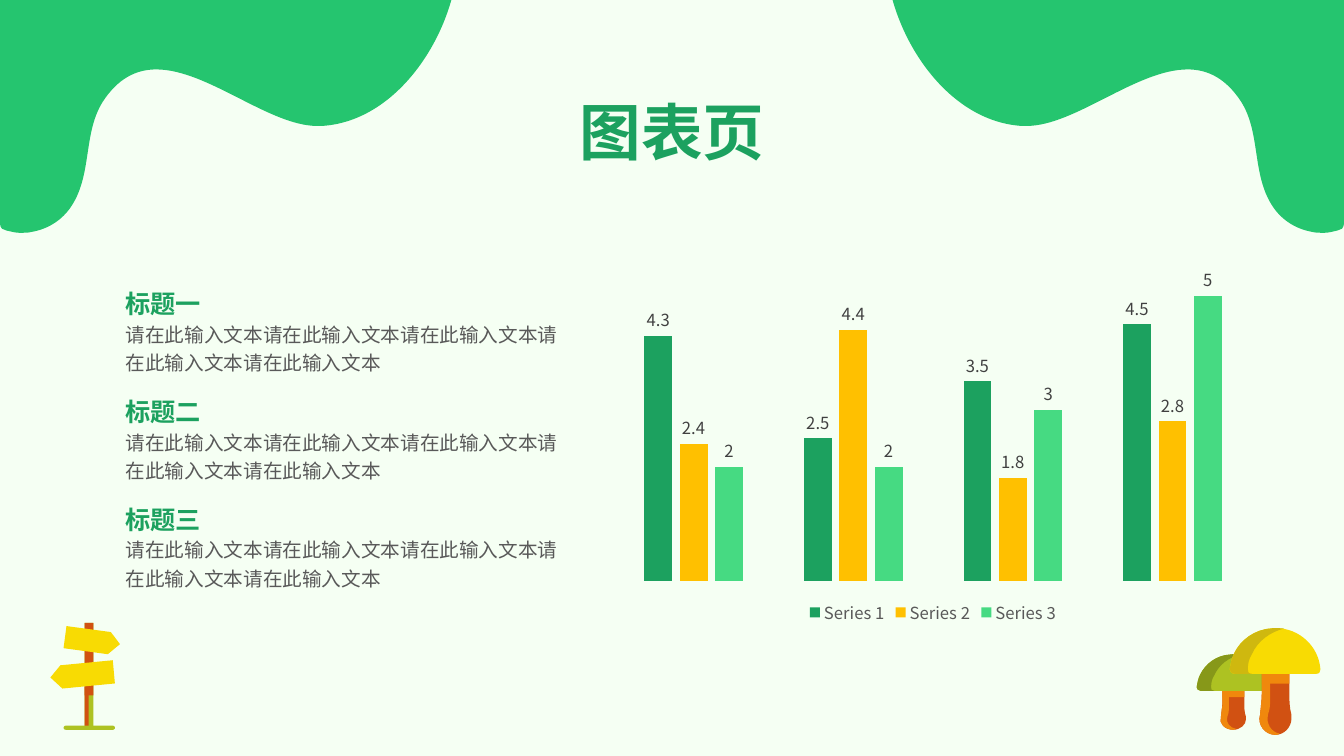
from lxml.etree import SubElement
from pptx import Presentation
from pptx.chart.data import CategoryChartData
from pptx.dml.color import RGBColor
from pptx.enum.chart import XL_CHART_TYPE, XL_LABEL_POSITION, XL_LEGEND_POSITION
from pptx.enum.shapes import MSO_SHAPE
from pptx.enum.text import MSO_ANCHOR, MSO_AUTO_SIZE, PP_ALIGN
from pptx.oxml.ns import qn
from pptx.util import Pt

FONT = "Noto Sans CJK JP"
COLORS = {
    "background": "F5FFF3", "wave": "25C56F", "heading": "1CA15F", "body": "595959",
    "label": "404040", "amber": "FFC000", "mint": "46DA82", "lime": "ADC222",
    "olive": "879819", "rust": "D15112", "orange": "F0880D", "yellow": "F8DB03",
    "mustard": "CFB80F",
}

# Outlines: a pair is a straight step, six numbers are a Bezier curve
WAVE = [
    (15.8, 337.7), (13, 337.7, 10.8, 337.7, 8.6, 337), (5.8, 336.2, 3.6, 336.2, 1.4, 334.8),
    (0.7, 334.1, 0, 332.6, 0, 331.2), (0, 5), (0, 2.2, 2.2, 0, 5.8, 0), (229, 0),
    (292.3, 25.9, 339.8, 90, 324.7, 162), (315.4, 207.4, 279.4, 258.5, 229.7, 261.4),
    (229, 261.4, 227.5, 261.4, 226.8, 261.4), (192.2, 261.4, 148.3, 221, 111.6, 221),
    (97.2, 221, 84.2, 227.5, 73.4, 244.1), (59.8, 265.7, 65.5, 293.8, 52.6, 316.1),
    (46.1, 327.6, 35.3, 334.8, 23, 337), (20.2, 337.7, 18, 337.7, 15.8, 337.7),
]
UPPER_SIGN = [(11.5, 2.2), (9.4, 18), (41, 22.3), (49.7, 15.1), (43.2, 6.5)]
LOWER_SIGN = [(44.6, 26.6), (7.2, 30.2), (0, 38.9), (8.6, 46.8), (46.1, 43.2)]

# Mushroom outlines as fractions of the cap and of the stem
CAP_LEFT = [
    (0.5, 0), (0.49, 0, 0.47, 0, 0.455, 0.01), (0.28, 0.03, 0.12, 0.25, 0.045, 0.57),
    (0.02, 0.67, 0.01, 0.78, 0, 0.9), (0, 0.95, 0.02, 1, 0.055, 1),
]
CAP = CAP_LEFT + [(0.955, 1), (0.99, 1, 1, 0.95, 1, 0.9), (0.98, 0.4, 0.77, 0, 0.5, 0)]
CAP_SHADE = CAP_LEFT + [
    (0.245, 1), (0.21, 1, 0.19, 0.95, 0.2, 0.9), (0.2, 0.78, 0.21, 0.68, 0.245, 0.57),
    (0.31, 0.28, 0.445, 0.09, 0.6, 0.01), (0.57, 0.01, 0.53, 0, 0.5, 0),
]
STEM_LEFT = [
    (0.14, 0), (0.14, 0.32), (0.14, 0.37, 0.14, 0.43, 0.12, 0.48),
    (0.12, 0.55, 0.09, 0.61, 0.09, 0.67), (0, 0.83, 0.23, 1, 0.53, 1),
]
STEM = STEM_LEFT + [
    (0.8, 1, 1, 0.87, 1, 0.73), (1, 0.72, 1, 0.7, 1, 0.67),
    (0.94, 0.55, 0.94, 0.43, 0.94, 0.32), (0.94, 0),
]
STEM_LIGHT = STEM_LEFT + [
    (0.59, 1, 0.62, 1, 0.65, 0.98), (0.41, 0.95, 0.26, 0.82, 0.32, 0.67),
    (0.35, 0.61, 0.38, 0.55, 0.38, 0.48), (0.38, 0.43, 0.38, 0.37, 0.38, 0.32), (0.38, 0),
]


def rgb(name):
    return RGBColor.from_string(COLORS[name])


def paint(shape, color):
    shape.fill.solid()
    shape.fill.fore_color.rgb = rgb(color)
    shape.line.fill.background()
    shape.shadow.inherit = False


def draw_outline(slide, outline, left, top, color, scale_x=1, scale_y=1):
    points = [(Pt(left + step[i] * scale_x), Pt(top + step[i + 1] * scale_y))
              for step in outline for i in range(0, len(step), 2)]
    builder = slide.shapes.build_freeform(*points[0])
    builder.add_line_segments(points[1:])
    shape = builder.convert_to_shape()
    paint(shape, color)
    # Join each three points of a curve into one Bezier segment
    segments = iter(list(shape._element.iter(qn("a:lnTo"))))
    for step in outline[1:]:
        curve = next(segments)
        if len(step) == 6:
            curve.tag = qn("a:cubicBezTo")
            for extra in (next(segments), next(segments)):
                curve.append(extra[0])
                extra.getparent().remove(extra)


def draw_block(slide, left, top, width, height, color, kind=MSO_SHAPE.RECTANGLE):
    block = slide.shapes.add_shape(kind, Pt(left), Pt(top), Pt(width), Pt(height))
    paint(block, color)
    return block


def add_text(slide, left, top, width, height, text, size, color, bold=False):
    box = slide.shapes.add_textbox(Pt(left), Pt(top), Pt(width), Pt(height))
    frame = box.text_frame
    frame.text = text
    frame.word_wrap = True
    run = frame.paragraphs[0].runs[0]
    run.font.size, run.font.bold = Pt(size), bold
    run.font.color.rgb = rgb(color)
    run.font.name = FONT
    SubElement(run.font._element, qn("a:ea")).set("typeface", FONT)
    return frame


def add_waves(slide, left, top, width):
    draw_outline(slide, WAVE, left + width, top, "wave", scale_x=-1)
    draw_outline(slide, WAVE, left, top, "wave")


def add_title(slide, left, top, width, height):
    frame = add_text(slide, left, top, width, height, "图表页", 44, "heading", True)
    frame.vertical_anchor = MSO_ANCHOR.MIDDLE
    frame.margin_top = frame.margin_bottom = Pt(7.2)
    frame.paragraphs[0].alignment = PP_ALIGN.CENTER


def add_sections(slide, left, top, width, pitch):
    for row, heading in enumerate(("标题一", "标题二", "标题三")):
        y = top + row * pitch
        body = add_text(slide, left, y + 21.8, width, 46, "请在此输入文本" * 5, 14, "body")
        body.margin_top = body.margin_bottom = Pt(7.2)
        body.paragraphs[0].line_spacing = 1.2
        body.paragraphs[0].space_after = Pt(10)
        title = add_text(slide, left, y, 68.4, 31.7, heading, 18, "heading", True)
        title.word_wrap = False
        title.auto_size = MSO_AUTO_SIZE.SHAPE_TO_FIT_TEXT
        title.paragraphs[0].line_spacing = 1.2


def add_signpost(slide, left, top):
    # Post: lime core with rust faces
    post = left + 24.5
    draw_block(slide, post, top, 6.2, 75, "lime")
    draw_block(slide, post, top + 45.4, 2.9, 29.5, "rust")
    for y, height in ((41, 10.8), (0, 5), (15.8, 18)):
        draw_block(slide, post, top + y, 6.2, height, "rust")
    # Signs and ground
    for sign in (UPPER_SIGN, LOWER_SIGN):
        draw_outline(slide, sign, left, top, "yellow")
    ground = draw_block(slide, left + 9.4, top + 73.4, 36.7, 2.9, "lime",
                        MSO_SHAPE.ROUNDED_RECTANGLE)
    ground.adjustments[0] = 0.5


def add_mushroom(slide, left, top, width, height, cap_color, shade_color):
    cap_height = width * 0.505
    stem_height = height - cap_height
    stem_left, stem_top, stem_width = left + width * 0.3, top + cap_height, width * 0.38
    for outline, color in ((STEM, "rust"), (STEM_LIGHT, "orange")):
        draw_outline(slide, outline, stem_left, stem_top, color, stem_width, stem_height)
    draw_block(slide, stem_left + 0.14 * stem_width, stem_top,
               0.8 * stem_width, 0.16 * stem_height, "orange")
    for outline, color in ((CAP, cap_color), (CAP_SHADE, shade_color)):
        draw_outline(slide, outline, left, top, color, width, cap_height)


def style_font(font, size, color):
    font.name, font.size = FONT, Pt(size)
    font.color.rgb = rgb(color)


def add_column_chart(slide, left, top, width, height):
    data = CategoryChartData()
    data.categories = ["1", "2", "3", "4"]
    data.add_series("Series 1", (4.3, 2.5, 3.5, 4.5))
    data.add_series("Series 2", (2.4, 4.4, 1.8, 2.8))
    data.add_series("Series 3", (2, 2, 3, 5))
    chart = slide.shapes.add_chart(XL_CHART_TYPE.COLUMN_CLUSTERED, Pt(left), Pt(top),
                                   Pt(width), Pt(height), data).chart
    chart.has_title = False
    chart.font.name, chart.font.size = FONT, Pt(10)
    # Hidden axes
    chart.category_axis.visible = chart.value_axis.visible = False
    chart.value_axis.has_major_gridlines = False
    chart.value_axis.minimum_scale, chart.value_axis.maximum_scale = 0, 6
    # Legend
    chart.has_legend = True
    chart.legend.position = XL_LEGEND_POSITION.BOTTOM
    chart.legend.include_in_layout = False
    style_font(chart.legend.font, 11.9, "body")
    # Columns and their values
    plot = chart.plots[0]
    plot.gap_width, plot.overlap, plot.vary_by_categories = 219, -27, False
    for series, color in zip(plot.series, ("heading", "amber", "mint")):
        series.format.fill.solid()
        series.format.fill.fore_color.rgb = rgb(color)
        labels = series.data_labels
        labels.show_value = True
        labels.position = XL_LABEL_POSITION.OUTSIDE_END
        style_font(labels.font, 11.9, "label")


def main():
    deck = Presentation()
    deck.slide_width, deck.slide_height = Pt(960), Pt(540)
    slide = deck.slides.add_slide(deck.slide_layouts[6])
    slide.background.fill.solid()
    slide.background.fill.fore_color.rgb = rgb("background")
    add_waves(slide, 0, -171.4, 960)
    add_title(slide, 285, 60.5, 390, 66)
    add_sections(slide, 82.6, 198, 325.4, 77.1)
    add_signpost(slide, 36, 445)
    add_mushroom(slide, 854.8, 467.3, 51.8, 54, "lime", "olive")
    add_mushroom(slide, 878.4, 448.6, 64.8, 76.3, "yellow", "mustard")
    add_column_chart(slide, 429, 165, 475, 284.4)
    deck.save("out.pptx")


if __name__ == "__main__":
    main()
